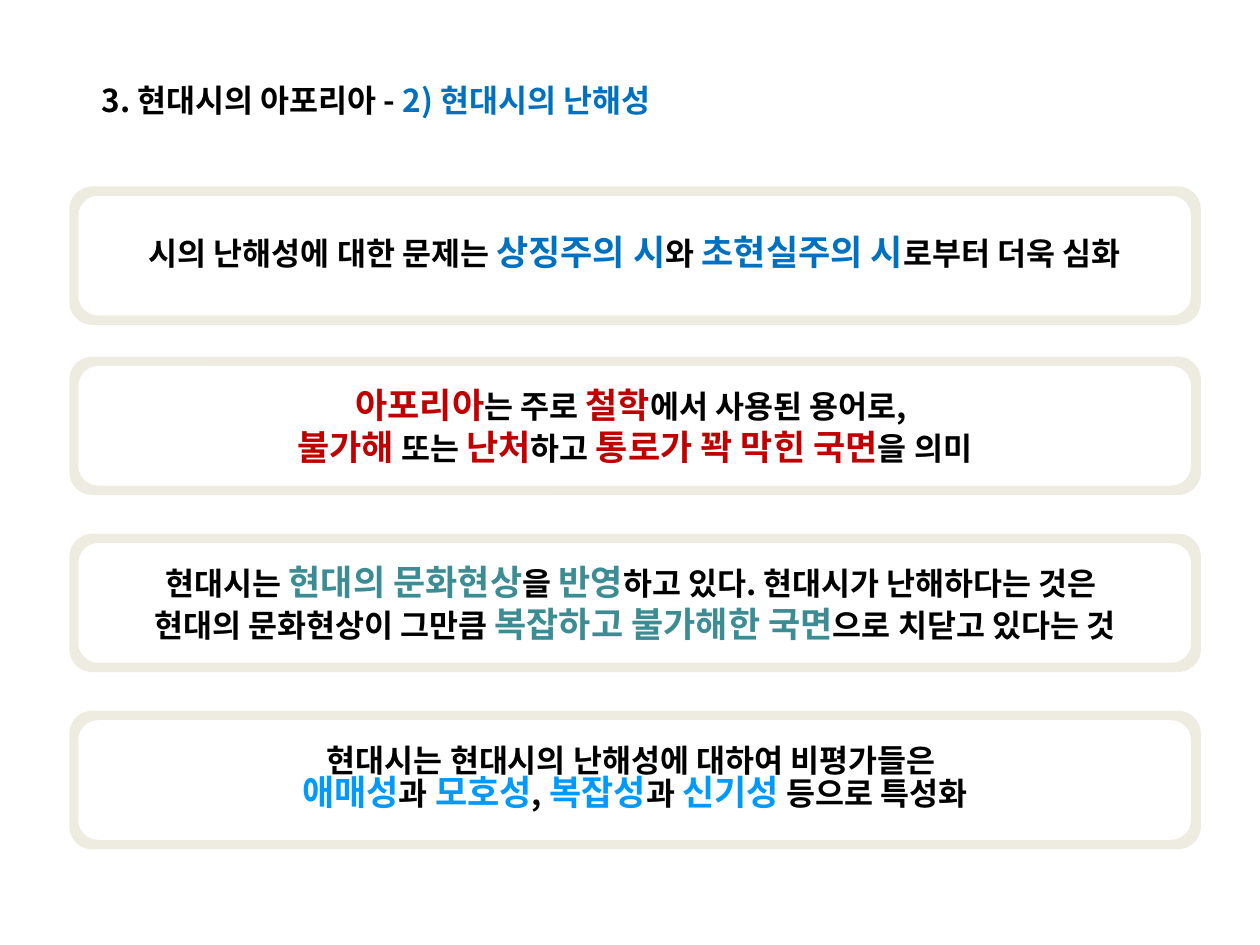
from pptx import Presentation
from pptx.dml.color import RGBColor
from pptx.enum.shapes import MSO_SHAPE as Shape
from pptx.enum.text import MSO_ANCHOR as Anchor, PP_ALIGN as Align
from pptx.oxml.ns import qn
from pptx.util import Cm, Pt

FONT = "Noto Sans CJK KR"
PANELS = [
    (3.76, "0070C0", 0.8,
     ["시의 난해성에 대한 문제는 *상징주의 시*와 *초현실주의 시*로부터 더욱 심화"]),
    (7.19, "C00000", 1.0,
     ["*아포리아*는 주로 *철학*에서 사용된 용어로, ",
      "*불가해* 또는 *난처*하고 *통로가 꽉 막힌 국면*을 의미"]),
    (10.76, "3C8C93", 1.0,
     ["현대시는 *현대의 문화현상*을 *반영*하고 있다. 현대시가 난해하다는 것은 \n"
      "현대의 문화현상이 그만큼 *복잡하고 불가해한 국면*으로 치닫고 있다는 것"]),
    (14.33, "0099FF", 0.8,
     ["현대시는 현대시의 난해성에 대하여 비평가들은 ",
      "*애매성*과 *모호성*, *복잡성*과 *신기성* 등으로 특성화"]),
]


def color(value):
    """Turn a hex string into a colour."""
    return RGBColor.from_string(value)


def add_span(para, text, size=18, fill="000000"):
    """Add one bold run of text to a paragraph."""
    span = para.add_run()
    span.text = text
    span.font.size = Pt(size)
    span.font.bold = True
    span.font.name = FONT
    span.font.color.rgb = color(fill)
    east_asian = span.font._element.makeelement(qn("a:ea"), {"typeface": FONT})
    span.font._element.find(qn("a:latin")).addnext(east_asian)


def write(para, text, accent, accent_size=20, align=Align.CENTER, spacing=1.0):
    """Write text whose parts between asterisks take the accent format."""
    para.alignment = align
    para.line_spacing = spacing
    for index, part in enumerate(text.split("*")):
        style = {"size": accent_size, "fill": accent} if index % 2 else {}
        for number, line in enumerate(part.split("\n")):
            if number:
                para.add_line_break()
            if line:
                add_span(para, line, **style)


def add_rounded(page, left, top, width, height, fill):
    """Add a plain rounded rectangle."""
    box = page.shapes.add_shape(
        Shape.ROUNDED_RECTANGLE, Cm(left), Cm(top), Cm(width), Cm(height))
    box.shadow.inherit = False
    box.fill.solid()
    box.fill.fore_color.rgb = color(fill)
    box.line.fill.background()
    return box


def add_panel(page, top, accent, spacing, lines):
    """Add a framed panel with centred text."""
    add_rounded(page, 1.4, top, 22.81, 2.79, "EEECE1")
    frame = add_rounded(page, 1.58, top + 0.19, 22.43, 2.41, "FFFFFF").text_frame
    frame.word_wrap = True
    frame.vertical_anchor = Anchor.MIDDLE
    for index, line in enumerate(lines):
        para = frame.add_paragraph() if index else frame.paragraphs[0]
        write(para, line, accent, spacing=spacing)


def add_title(page):
    """Add the heading line."""
    frame = page.shapes.add_textbox(Cm(1.65), Cm(1.5), Cm(16.4), Cm(1.02)).text_frame
    frame.word_wrap = True
    frame.margin_left = Cm(0.4)
    write(frame.paragraphs[0], "3. 현대시의 아포리아 - *2) 현대시의 난해성*",
          "0070C0", accent_size=18, align=Align.LEFT)


def main():
    """Build and save the slide."""
    deck = Presentation()
    deck.slide_width, deck.slide_height = Cm(25.4), Cm(19.05)
    page = deck.slides.add_slide(deck.slide_layouts[6])
    add_title(page)
    for panel in PANELS:
        add_panel(page, *panel)
    deck.save("out.pptx")


if __name__ == "__main__":
    main()
